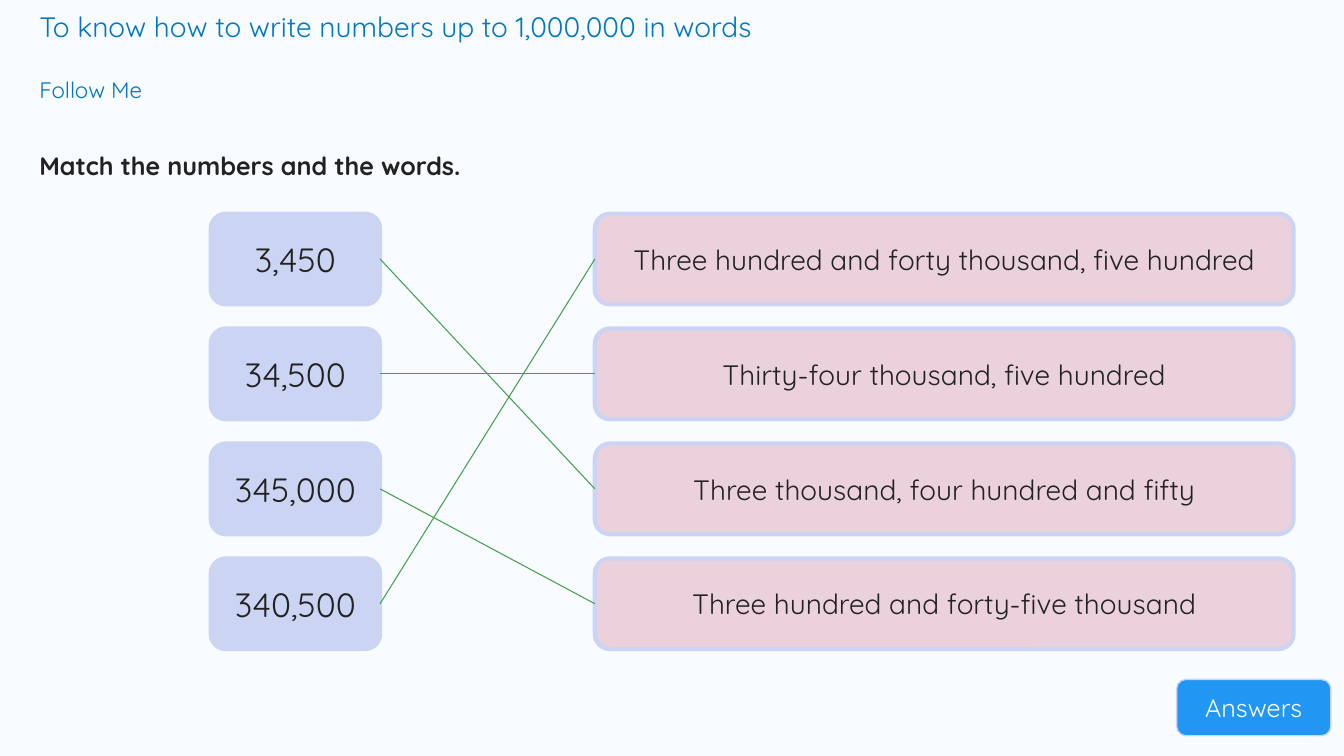
from dataclasses import dataclass

import pptx
import pptx.dml.color
import pptx.enum.shapes
import pptx.enum.text
import pptx.util
from lxml import etree
from pptx.oxml.ns import qn

Inches = pptx.util.Inches
Pt = pptx.util.Pt
Align = pptx.enum.text.PP_ALIGN
Anchor = pptx.enum.text.MSO_ANCHOR


@dataclass(frozen=True)
class Theme:
    font: str = "Quicksand"
    background: str = "F8FBFF"
    heading: str = "0277BD"
    ink: str = "222222"
    number_fill: str = "CCD4F4"
    words_fill: str = "EAD1DC"
    border: str = "CCD4F4"
    match_line: str = "43A047"
    button: str = "2196F3"
    button_text: str = "FFFFFF"
    title_size: int = 20
    section_size: int = 16
    task_size: int = 18
    number_size: int = 24
    words_size: int = 20
    button_size: int = 18


THEME = Theme()

NUMBERS = ["3,450", "34,500", "345,000", "340,500"]
WORDS = [
    "Three hundred and forty thousand, five hundred",
    "Thirty-four thousand, five hundred",
    "Three thousand, four hundred and fifty",
    "Three hundred and forty-five thousand",
]
# Row of the matching words for each number
MATCHES = [2, 1, 3, 0]

FIRST_ROW, ROW_STEP, CARD_HEIGHT = 2.12, 1.14, 0.9
NUMBER_LEFT, NUMBER_WIDTH = 2.09, 1.68
WORDS_LEFT, WORDS_WIDTH = 5.9, 6.93
RIGHT_SITE, LEFT_SITE = 3, 1


def rgb(code):
    return pptx.dml.color.RGBColor.from_string(code)


def style_runs(paragraph, size, color, bold=False):
    for run in paragraph.runs:
        run.font.name = THEME.font
        run.font.size = Pt(size)
        run.font.bold = bold
        run.font.color.rgb = rgb(color)


def fill_placeholder(holder, text, box, size, color, bold=False, spacing=1.0):
    """Move a placeholder to box and give it one plain left-aligned line."""
    holder.left, holder.top, holder.width, holder.height = map(Inches, box)
    frame = holder.text_frame
    frame.text = text
    frame.word_wrap = True
    frame.auto_size = pptx.enum.text.MSO_AUTO_SIZE.NONE
    frame.vertical_anchor = Anchor.TOP
    paragraph = frame.paragraphs[0]
    properties = paragraph._p.get_or_add_pPr()
    properties.set("marL", "0")
    properties.set("indent", "0")
    etree.SubElement(properties, qn("a:buNone"))
    paragraph.alignment = Align.LEFT
    paragraph.space_before = Pt(0)
    paragraph.line_spacing = spacing
    style_runs(paragraph, size, color, bold)


def add_card(slide, text, box, size, fill, color=THEME.ink, border_width=3):
    """Add a rounded rectangle with centred text."""
    card = slide.shapes.add_shape(
        pptx.enum.shapes.MSO_SHAPE.ROUNDED_RECTANGLE, *map(Inches, box))
    card.shadow.inherit = False
    card.fill.solid()
    card.fill.fore_color.rgb = rgb(fill)
    card.line.color.rgb = rgb(THEME.border)
    card.line.width = Pt(border_width)
    frame = card.text_frame
    frame.text = text
    frame.word_wrap = True
    frame.vertical_anchor = Anchor.MIDDLE
    frame.paragraphs[0].alignment = Align.CENTER
    style_runs(frame.paragraphs[0], size, color)
    return card


def add_card_column(slide, texts, left, width, size, fill):
    return [
        add_card(slide, text,
                 (left, FIRST_ROW + row * ROW_STEP, width, CARD_HEIGHT),
                 size, fill)
        for row, text in enumerate(texts)
    ]


def add_match_line(slide, number_card, words_card):
    line = slide.shapes.add_connector(
        pptx.enum.shapes.MSO_CONNECTOR.STRAIGHT, 0, 0, 0, 0)
    line.begin_connect(number_card, RIGHT_SITE)
    line.end_connect(words_card, LEFT_SITE)
    line.line.color.rgb = rgb(THEME.match_line)
    line.line.width = Pt(0.75)
    etree.SubElement(line._element.spPr, qn("a:effectLst"))


def main():
    deck = pptx.Presentation()
    deck.slide_width, deck.slide_height = Inches(13.33), Inches(7.5)
    two_content = deck.slide_layouts[3]
    slide = deck.slides.add_slide(two_content)
    slide.background.fill.solid()
    slide.background.fill.fore_color.rgb = rgb(THEME.background)

    title, section, task = slide.placeholders
    fill_placeholder(
        title, "To know how to write numbers up to 1,000,000 in words",
        (0.29, 0.04, 12.34, 0.44), THEME.title_size, THEME.heading)
    fill_placeholder(
        section, "Follow Me",
        (0.29, 0.71, 2.97, 0.46), THEME.section_size, THEME.heading)
    fill_placeholder(
        task, "Match the numbers and the words.",
        (0.29, 1.29, 12.84, 0.67), THEME.task_size, THEME.ink,
        bold=True, spacing=1.5)

    add_card(slide, "Answers", (11.67, 6.74, 1.53, 0.56), THEME.button_size,
             THEME.button, THEME.button_text, border_width=1)
    number_cards = add_card_column(
        slide, NUMBERS, NUMBER_LEFT, NUMBER_WIDTH,
        THEME.number_size, THEME.number_fill)
    words_cards = add_card_column(
        slide, WORDS, WORDS_LEFT, WORDS_WIDTH,
        THEME.words_size, THEME.words_fill)
    for number_card, words_row in zip(number_cards, MATCHES):
        add_match_line(slide, number_card, words_cards[words_row])

    deck.save("out.pptx")


if __name__ == "__main__":
    main()
